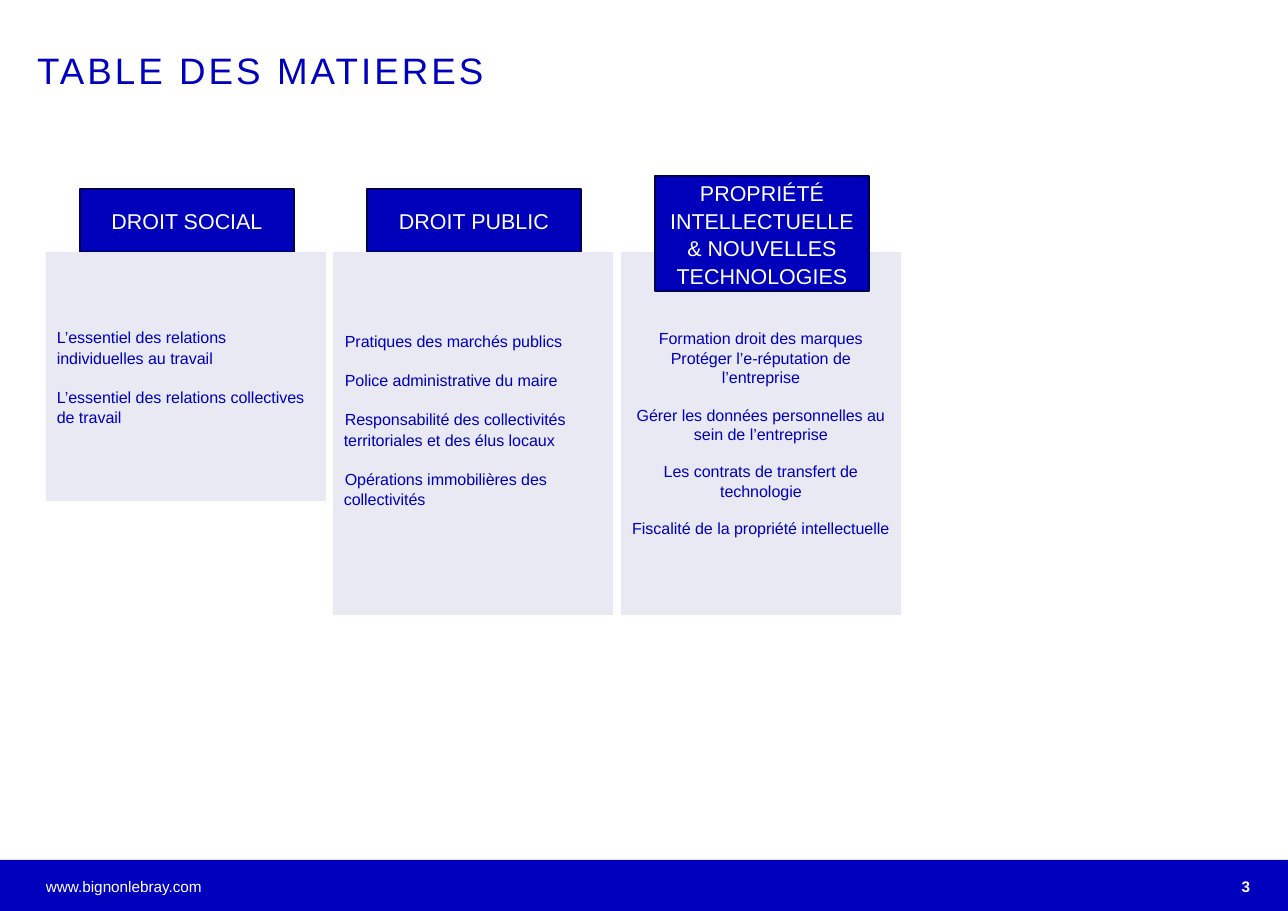
"""Builds the table of contents slide of a legal training catalogue."""
from pptx import Presentation
from pptx.dml.color import RGBColor
from pptx.enum.shapes import MSO_SHAPE
from pptx.enum.text import MSO_ANCHOR, MSO_AUTO_SIZE, PP_ALIGN
from pptx.util import Pt

EMU_PER_PX = 8298
SLIDE_W, SLIDE_H = 1288, 911
PANEL_TOP, PANEL_W = 252, 280
HEADING_W, HEADING_OFFSET = 214, 34
COLORS = {
    "bar": "0000BD",
    "heading": "0000BB",
    "border": "000052",
    "panel": "E9E9F3",
    "white": "FFFFFF",
}

SPACED = {"line_spacing": 1.07, "space_before": Pt(12), "alignment": PP_ALIGN.LEFT}
CENTERED = {"space_before": Pt(12), "alignment": PP_ALIGN.CENTER}
TIGHT = {"space_before": Pt(0), "alignment": PP_ALIGN.CENTER}
HEADING = {"line_spacing": 1.07, "alignment": PP_ALIGN.CENTER}

COLUMNS = [
    {
        "left": 621,
        "heading": ("PROPRIÉTÉ INTELLECTUELLE & NOUVELLES TECHNOLOGIES", 176, 115),
        "height": 363,
        "topics": [
            ("Formation droit des marques", CENTERED),
            ("Protéger l’e-réputation de l’entreprise", TIGHT),
            ("Gérer les données personnelles au sein de l’entreprise", CENTERED),
            ("Les contrats de transfert de technologie", CENTERED),
            ("Fiscalité de la propriété intellectuelle", CENTERED),
        ],
    },
    {
        "left": 333,
        "heading": ("DROIT PUBLIC", 189, 63),
        "height": 363,
        "bottom_inset": 33,
        "indent": 1,
        "topics": [
            ("Pratiques des marchés publics", SPACED),
            ("Police administrative du maire", SPACED),
            ("Responsabilité des collectivités territoriales et des élus locaux", SPACED),
            ("Opérations immobilières des collectivités", SPACED),
        ],
    },
    {
        "left": 46,
        "heading": ("DROIT SOCIAL", 189, 63),
        "height": 249,
        "topics": [
            ("L’essentiel des relations individuelles au travail", SPACED),
            ("L’essentiel des relations collectives de travail", SPACED),
        ],
    },
]


def px(length):
    return length * EMU_PER_PX


def apply(target, values):
    for name, value in values.items():
        setattr(target, name, value)


def write(paragraph, text, size, color, layout, bold=False):
    paragraph.text = text
    apply(paragraph, layout)
    font = paragraph.runs[0].font
    apply(font, {"name": "Arial", "size": Pt(size), "bold": bold})
    font.color.rgb = RGBColor.from_string(COLORS[color])


def set_insets(frame, inset=0):
    sides = ("left", "top", "right", "bottom")
    apply(frame, {f"margin_{side}": px(inset) for side in sides})


def add_box(slide, left, top, width, height, fill, border=None):
    box = slide.shapes.add_shape(
        MSO_SHAPE.RECTANGLE, px(left), px(top), px(width), px(height))
    box.shadow.inherit = False
    box.fill.solid()
    box.fill.fore_color.rgb = RGBColor.from_string(COLORS[fill])
    if border:
        box.line.color.rgb = RGBColor.from_string(COLORS[border])
        box.line.width = Pt(1)
    else:
        box.line.fill.background()
    apply(box.text_frame, {"word_wrap": True, "vertical_anchor": MSO_ANCHOR.MIDDLE})
    return box


def add_heading(slide, column):
    text, top, height = column["heading"]
    heading = add_box(slide, column["left"] + HEADING_OFFSET, top,
                      HEADING_W, height, "heading", "border")
    write(heading.text_frame.paragraphs[0], text, 14, "white", HEADING)


def add_panel(slide, column):
    panel = add_box(slide, column["left"], PANEL_TOP, PANEL_W, column["height"], "panel")
    frame = panel.text_frame
    if "bottom_inset" in column:
        frame.margin_bottom = px(column["bottom_inset"])
    for index, (topic, layout) in enumerate(column["topics"]):
        paragraph = frame.add_paragraph() if index else frame.paragraphs[0]
        write(paragraph, topic, 10.5, "heading", layout)
        if "indent" in column:
            paragraph._p.get_or_add_pPr().set("indent", str(px(column["indent"])))
    frame.paragraphs[0].space_before = None


def add_column(slide, column):
    _, heading_top, heading_height = column["heading"]
    steps = [add_heading, add_panel]
    if heading_top + heading_height > PANEL_TOP:
        steps.reverse()
    for step in steps:
        step(slide, column)


def add_footer_text(slide, text, left, width, height, alignment, bold=False):
    footer = slide.shapes.add_textbox(px(left), px(877), px(width), px(height))
    footer.text_frame.word_wrap = True
    set_insets(footer.text_frame)
    write(footer.text_frame.paragraphs[0], text, 10, "white",
          {"alignment": alignment}, bold)


def format_title(slide, text):
    title = slide.shapes.title
    apply(title, {"left": px(37), "top": px(53), "width": px(1213), "height": px(39)})
    apply(title.text_frame, {
        "word_wrap": True,
        "vertical_anchor": MSO_ANCHOR.BOTTOM,
        "auto_size": MSO_AUTO_SIZE.SHAPE_TO_FIT_TEXT,
    })
    set_insets(title.text_frame)
    paragraph = title.text_frame.paragraphs[0]
    write(paragraph, text, 24, "bar",
          {"line_spacing": Pt(25), "alignment": PP_ALIGN.LEFT})
    paragraph.runs[0]._r.get_or_add_rPr().set("spc", "200")


def main():
    deck = Presentation()
    apply(deck, {"slide_width": px(SLIDE_W), "slide_height": px(SLIDE_H)})
    slide = deck.slides.add_slide(deck.slide_layouts[5])
    format_title(slide, "TABLE DES MATIERES")
    add_box(slide, 0, 860, SLIDE_W, SLIDE_H - 860, "bar")
    add_footer_text(slide, "www.bignonlebray.com", 46, 435, 13, PP_ALIGN.LEFT)
    add_footer_text(slide, "3", 961, 289, 19, PP_ALIGN.RIGHT, bold=True)
    for column in COLUMNS:
        add_column(slide, column)
    deck.save("out.pptx")


if __name__ == "__main__":
    main()
